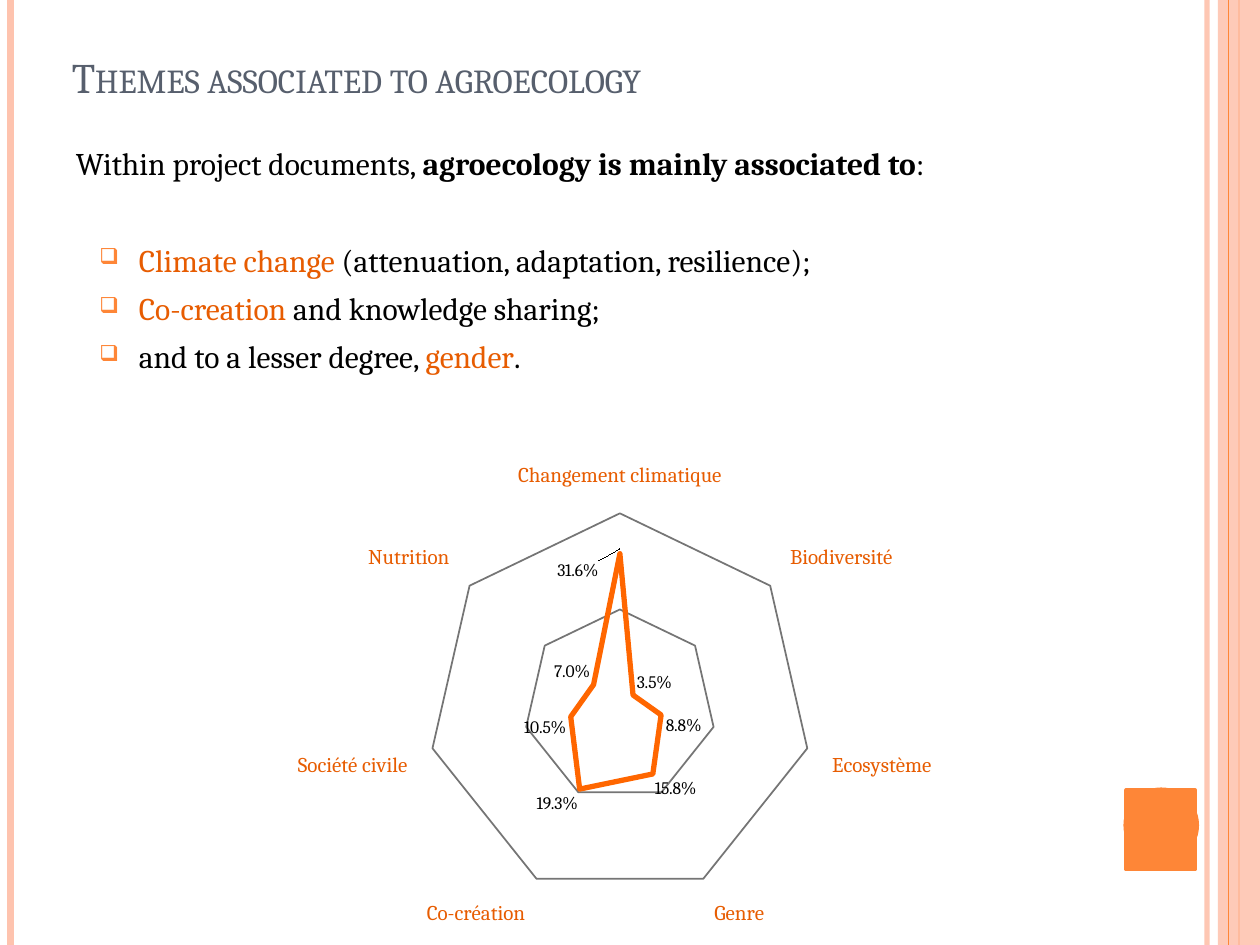
from pptx import Presentation
from pptx.chart.data import CategoryChartData
from pptx.dml.color import RGBColor
from pptx.enum.chart import XL_CHART_TYPE as CT
from pptx.enum.shapes import MSO_CONNECTOR, MSO_SHAPE as MS
from pptx.enum.text import MSO_ANCHOR, PP_ALIGN
from pptx.oxml import parse_xml
from pptx.oxml.ns import nsdecls, qn
from pptx.util import Pt
from lxml import etree

ORANGE = RGBColor(0xFE, 0x86, 0x37)
DEEP = RGBColor(0xE7, 0x5C, 0x01)
SERIES = RGBColor(0xFF, 0x66, 0x00)
PEACH = RGBColor(0xFE, 0xC3, 0xAE)
SLATE = RGBColor(0x57, 0x5F, 0x6D)
GRAY = RGBColor(0x75, 0x75, 0x75)
BLACK = RGBColor(0, 0, 0)
FONT = "Cambria"
TITLE_SIZE, BODY_SIZE, AXIS_SIZE, LABEL_SIZE = 24, 18, 12, 10
SLIDE_W, SLIDE_H = 720, 540
BAND_W = 24
PARA_GAP = 6
LIST_GAP = 34
LIST_INDENT, BULLET_HANG = 36, 22.5


def style_font(font, size, color):
    font.name = FONT
    font.size = Pt(size)
    font.color.rgb = color


def add_runs(p, size, runs):
    for text, color, bold in runs:
        r = p.add_run()
        r.text = text
        r.font.bold = bold
        style_font(r.font, size, color)


prs = Presentation()
prs.slide_width, prs.slide_height = Pt(SLIDE_W), Pt(SLIDE_H)
s = prs.slides.add_slide(prs.slide_layouts[6])

stripes = []
for x, width, color in [(689.75, 3, PEACH), (6, 4.5, PEACH),
                        (708, 1.5, ORANGE), (702, 0.75, ORANGE)]:
    sp = s.shapes.add_connector(MSO_CONNECTOR.STRAIGHT, Pt(x), 0, Pt(x), Pt(SLIDE_H))
    sp.line.color.rgb = color
    sp.line.width = Pt(width)
    etree.SubElement(sp._element.spPr, qn("a:effectLst"))
    stripes.append(sp)
right_stripe, left_stripe, band_stripe, thin_stripe = stripes

blocks = []
for kind, x, y, w, h, color, outline in [
    (MS.RECTANGLE, SLIDE_W - BAND_W, 0, BAND_W, SLIDE_H, PEACH, 0),
    (MS.OVAL, 642, 450, 43.2, 43.2, ORANGE, 0),
    (MS.RECTANGLE, 643.5, 451.5, 39.5, 45.4, ORANGE, 2),
]:
    sp = s.shapes.add_shape(kind, Pt(x), Pt(y), Pt(w), Pt(h))
    sp.shadow.inherit = False
    sp.fill.solid()
    sp.fill.fore_color.rgb = color
    if outline:
        sp.line.color.rgb = color
        sp.line.width = Pt(outline)
    else:
        sp.line.fill.background()
    blocks.append(sp)
band = blocks[0]
band._element.addnext(thin_stripe._element)

for sp, percent in [(right_stripe, 93), (band, 87)]:
    clr = next(sp._element.spPr.iter(qn("a:srgbClr")))
    etree.SubElement(clr, qn("a:alpha")).set("val", str(percent * 1000))

tf = s.shapes.add_textbox(Pt(34), Pt(11.5), Pt(588), Pt(50.4)).text_frame
tf.word_wrap = True
tf.vertical_anchor = MSO_ANCHOR.BOTTOM
p = tf.paragraphs[0]
add_runs(p, TITLE_SIZE, [("Themes associated to agroecology", SLATE, False)])
p.runs[0].font._element.set("cap", "small")

theme_shares = {
    "Changement climatique": 0.316,
    "Biodiversité": 0.035,
    "Ecosystème": 0.088,
    "Genre": 0.158,
    "Co-création": 0.193,
    "Société civile": 0.105,
    "Nutrition": 0.07,
}
data = CategoryChartData(number_format="0.0%")
data.categories = list(theme_shares)
data.add_series("Series 1", list(theme_shares.values()))
chart = s.shapes.add_chart(CT.RADAR, Pt(151), Pt(183.5), Pt(402.5), Pt(422.6), data).chart
chart.has_legend = False
chart.has_title = False
style_font(chart.font, LABEL_SIZE, BLACK)

cat = chart.category_axis
cat.has_major_gridlines = False
style_font(cat.tick_labels.font, AXIS_SIZE, DEEP)

val = chart.value_axis
val.minimum_scale, val.maximum_scale, val.major_unit = 0, 0.4, 0.2
val.has_major_gridlines = True
val.major_gridlines.format.line.color.rgb = GRAY
val.major_gridlines.format.line.width = Pt(1)
val.visible = False

plot = chart.plots[0]
plot.vary_by_categories = False
series = plot.series[0]
series.smooth = False
series.format.line.color.rgb = SERIES
series.format.line.width = Pt(3)

labels = series.data_labels
labels.show_value = True
labels.number_format = "0.0%"
labels.number_format_is_linked = False
style_font(labels.font, LABEL_SIZE, BLACK)
flags = "".join(
    f'<c:{flag} val="{int(flag == "showVal")}"/>'
    for flag in ("showLegendKey", "showVal", "showCatName",
                 "showSerName", "showPercent", "showBubbleSize"))
labels._element.insert(0, parse_xml(
    f'<c:dLbl {nsdecls("c")}><c:idx val="0"/><c:layout><c:manualLayout>'
    f'<c:x val="-0.06"/><c:y val="0.05"/></c:manualLayout></c:layout>{flags}</c:dLbl>'))
labels._element.append(parse_xml(
    f'<c:extLst {nsdecls("c")}><c:ext uri="{{CE6537A1-D6FC-4f65-9D91-7224C49458BB}}" '
    'xmlns:c15="http://schemas.microsoft.com/office/drawing/2012/chart">'
    '<c15:showLeaderLines val="0"/></c:ext></c:extLst>'))

area = chart._chartSpace.chart.plotArea
for old in area.findall(qn("c:layout")):
    area.remove(old)
area.insert(0, parse_xml(
    f'<c:layout {nsdecls("c")}><c:manualLayout><c:layoutTarget val="inner"/>'
    '<c:xMode val="edge"/><c:yMode val="edge"/><c:x val="0.23"/><c:y val="0.26"/>'
    '<c:w val="0.55"/><c:h val="0.52"/></c:manualLayout></c:layout>'))

tf = s.shapes.add_textbox(Pt(36.25), Pt(78.5), Pt(636), Pt(157)).text_frame
tf.word_wrap = True
p = tf.paragraphs[0]
p.alignment = PP_ALIGN.JUSTIFY
add_runs(p, BODY_SIZE, [
    ("Within project documents, ", BLACK, False),
    ("agroecology is mainly associated to", BLACK, True),
    (":", BLACK, False),
])

themes = [
    [("Climate change ", DEEP, False), ("(attenuation, adaptation, resilience);", BLACK, False)],
    [("Co-creation ", DEEP, False), ("and knowledge sharing;", BLACK, False)],
    [("and to a lesser degree, ", BLACK, False), ("gender", DEEP, False), (".", BLACK, False)],
]
for i, runs in enumerate(themes):
    p = tf.add_paragraph()
    p.alignment = PP_ALIGN.JUSTIFY
    p.space_before = Pt(PARA_GAP if i else LIST_GAP)
    pPr = p._p.get_or_add_pPr()
    pPr.set("marL", str(Pt(LIST_INDENT)))
    pPr.set("indent", str(Pt(-BULLET_HANG)))
    clr = etree.SubElement(pPr, qn("a:buClr"))
    etree.SubElement(clr, qn("a:srgbClr")).set("val", str(ORANGE))
    etree.SubElement(pPr, qn("a:buSzPct")).set("val", "70000")
    etree.SubElement(pPr, qn("a:buChar")).set("char", "❑")
    add_runs(p, BODY_SIZE, runs)

prs.save("out.pptx")
